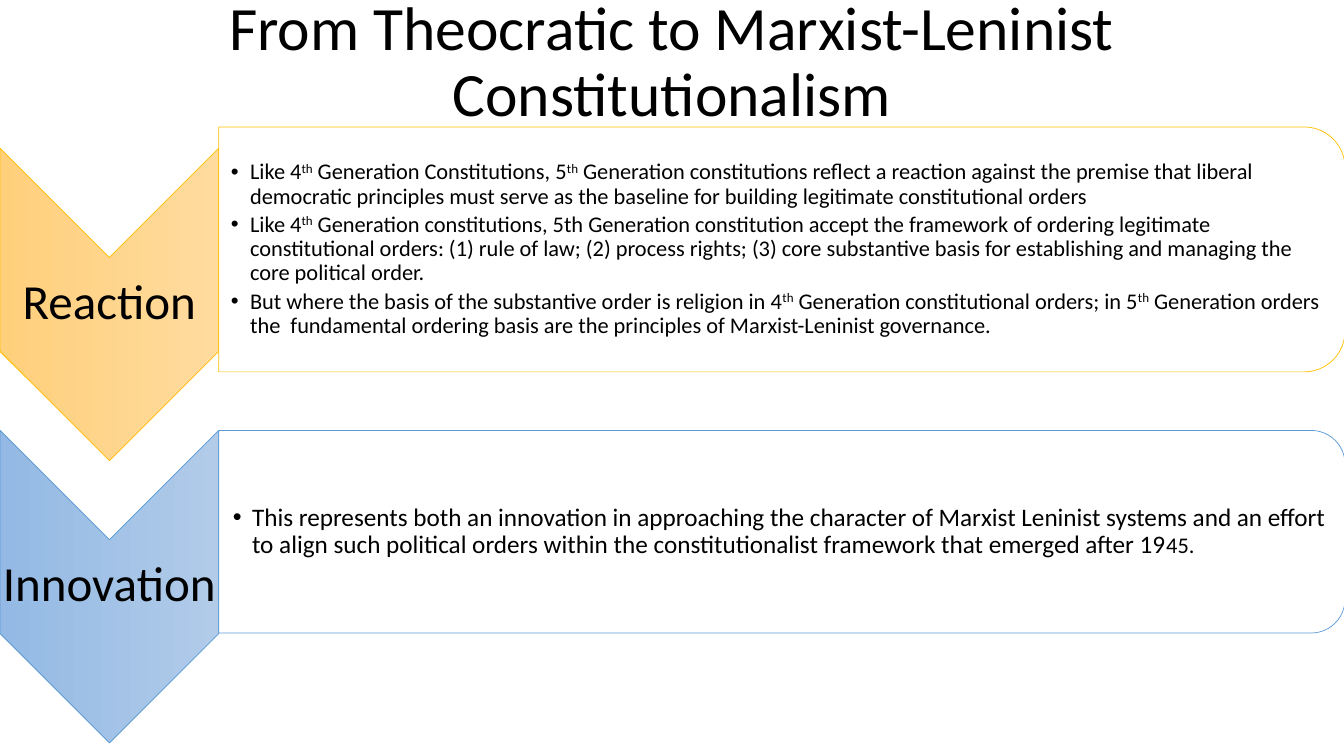
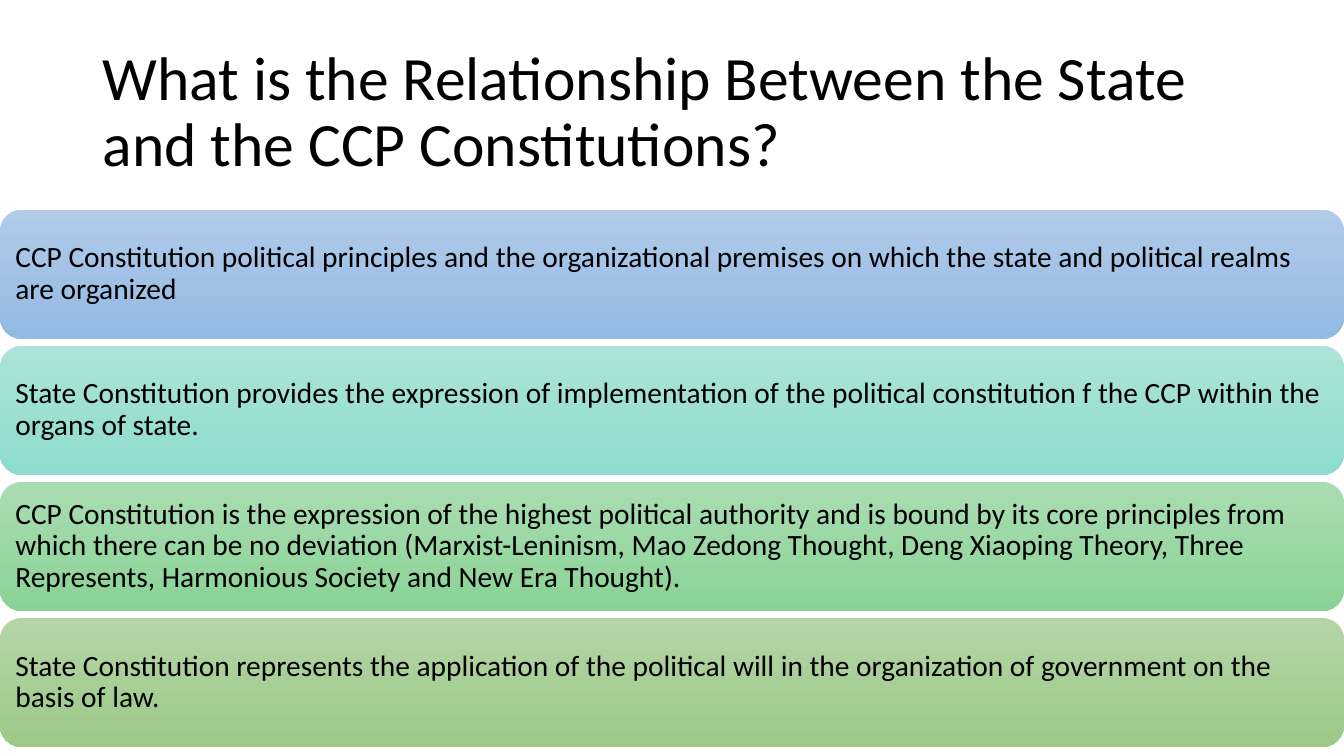
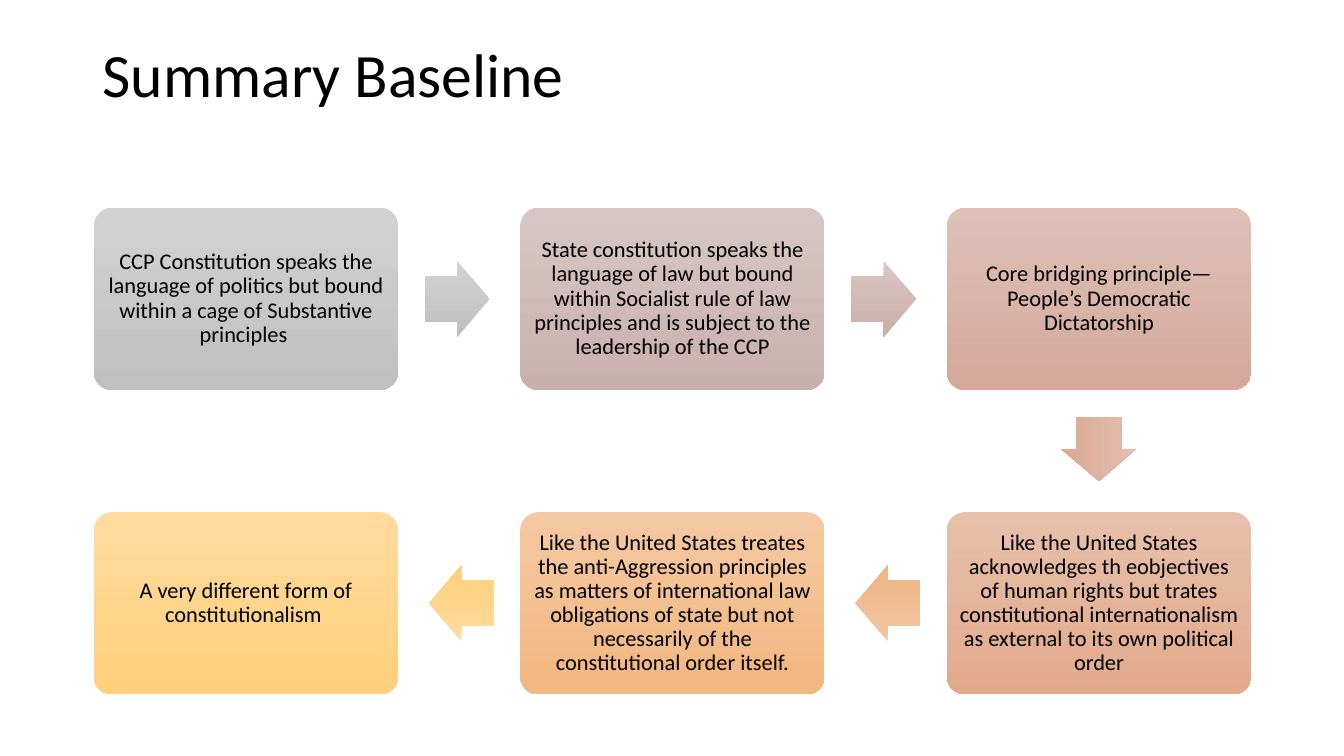
from math import atan2, copysign, degrees

from lxml import etree
from pptx import Presentation
from pptx.dml.color import RGBColor
from pptx.enum.shapes import MSO_SHAPE
from pptx.enum.text import MSO_ANCHOR, PP_ALIGN
from pptx.oxml.ns import qn
from pptx.util import Inches, Pt

CHEVRON = MSO_SHAPE.CHEVRON
TAB_PANEL = MSO_SHAPE.ROUND_2_SAME_RECTANGLE
ROUNDED = MSO_SHAPE.ROUNDED_RECTANGLE
ARROW = MSO_SHAPE.RIGHT_ARROW
MIDDLE = MSO_ANCHOR.MIDDLE
LEFT, CENTER = PP_ALIGN.LEFT, PP_ALIGN.CENTER

FONT = "Calibri"
BLACK, WHITE = "000000", "FFFFFF"
GOLD, BLUE = "FFC000", "5B9BD5"
GOLD_SHADES = ("FFDB9E", "FFD07C")
BLUE_SHADES = ("B1CBE9", "93B9E4")
SLIDE_WIDTH, SLIDE_HEIGHT = 13.33, 7.5
SUPERSCRIPT = {"baseline": "30000"}
SMALLER = {"sz": "1600"}


def rgb(value):
    return RGBColor.from_string(value)


def add_bullet(paragraph):
    properties = paragraph._p.get_or_add_pPr()
    properties.set("marL", str(Inches(0.19)))
    properties.set("indent", str(Inches(-0.19)))
    etree.SubElement(properties, qn("a:buFont")).set("typeface", "Arial")
    etree.SubElement(properties, qn("a:buChar")).set("char", "•")


class Deck:
    def __init__(self):
        self.presentation = Presentation()
        self.presentation.slide_width = Inches(SLIDE_WIDTH)
        self.presentation.slide_height = Inches(SLIDE_HEIGHT)
        self.slide = None

    def new_slide(self, title, left=0.92, top=0.4, width=11.5, height=1.45, align=LEFT):
        blank = self.presentation.slide_layouts[6]
        self.slide = self.presentation.slides.add_slide(blank)
        self.text_box((left, top, width, height), [title], 44, align, (0.1, 0.05, 0.1, 0.05))

    def fill_text(self, frame, paragraphs, size, align, insets, bullets=False, marked=None):
        """Fill a frame; text between ^ signs takes the run attributes in marked."""
        sides = ("margin_left", "margin_top", "margin_right", "margin_bottom")
        layout = dict(zip(sides, map(Inches, insets)))
        layout.update(word_wrap=True, vertical_anchor=MIDDLE)
        for name, value in layout.items():
            setattr(frame, name, value)
        for number, text in enumerate(paragraphs):
            paragraph = frame.add_paragraph() if number else frame.paragraphs[0]
            if bullets:
                add_bullet(paragraph)
            spacing = {"alignment": align, "line_spacing": 0.9}
            if number < len(paragraphs) - 1:
                spacing["space_after"] = Pt(3)
            for name, value in spacing.items():
                setattr(paragraph, name, value)
            for position, piece in enumerate(text.split("^")):
                if not piece:
                    continue
                run = paragraph.add_run()
                run.text = piece
                for name, value in {"name": FONT, "size": Pt(size)}.items():
                    setattr(run.font, name, value)
                run.font.color.rgb = rgb(BLACK)
                if position % 2:
                    for name, value in marked.items():
                        run._r.get_or_add_rPr().set(name, value)

    def text_box(self, box, paragraphs, size, align, insets, **options):
        frame = self.slide.shapes.add_textbox(*map(Inches, box)).text_frame
        self.fill_text(frame, paragraphs, size, align, insets, **options)

    def shape(self, preset, box, shades, line=None, rotation=0, adjustments=()):
        """Add a shape with one plain colour or a top-to-bottom pair of shades."""
        shape = self.slide.shapes.add_shape(preset, *map(Inches, box))
        shape.shadow.inherit = False
        shape.rotation = rotation
        for number, value in enumerate(adjustments):
            shape.adjustments[number] = value
        if isinstance(shades, str):
            shape.fill.solid()
            shape.fill.fore_color.rgb = rgb(shades)
        else:
            shape.fill.gradient()
            shape.fill.gradient_angle = 270
            for stop, shade in zip(shape.fill.gradient_stops, shades):
                stop.color.rgb = rgb(shade)
        if line:
            shape.line.color.rgb = rgb(line)
            shape.line.width = Pt(0.5)
        else:
            shape.line.fill.background()
        return shape

    def quarter_turned(self, preset, box, shades, line):
        """Add a shape turned by 90 degrees so that it covers the given box."""
        left, top, width, height = box
        shift = (width - height) / 2
        upright = (left + shift, top - shift, height, width)
        self.shape(preset, upright, shades, line, rotation=90)

    def card(self, box, text, size, shades, align, inset, adjustments=()):
        card = self.shape(ROUNDED, box, shades, adjustments=adjustments)
        self.fill_text(card.text_frame, [text], size, align, [inset] * 4)

    def arrow(self, start, end, shades):
        """Add a block arrow between the centres of two neighbouring cards."""
        width, height, setback = 0.64, 0.75, 0.02
        run, rise = end[0] - start[0], end[1] - start[1]
        center_x = (start[0] + end[0]) / 2 - (copysign(setback, run) if run else 0)
        center_y = (start[1] + end[1]) / 2 - (copysign(setback, rise) if rise else 0)
        box = (center_x - width / 2, center_y - height / 2, width, height)
        self.shape(ARROW, box, shades, rotation=degrees(atan2(rise, run)), adjustments=(0.6, 0.5))


def theocratic_slide(deck):
    deck.new_slide("From Theocratic to Marxist-Leninist Constitutionalism",
                   0, 0, SLIDE_WIDTH, 1.26, CENTER)
    reaction = [
        "Like 4^th^ Generation Constitutions, 5^th^ Generation constitutions reflect a reaction "
        "against the premise that liberal democratic principles must serve as the baseline for "
        "building legitimate constitutional orders",
        "Like 4^th^ Generation constitutions, 5th Generation constitution accept the framework of "
        "ordering legitimate constitutional orders: (1) rule of law; (2) process rights; (3) core "
        "substantive basis for establishing and managing the core political order.",
        "But where the basis of the substantive order is religion in 4^th^ Generation "
        "constitutional orders; in 5^th^ Generation orders the  fundamental ordering basis are "
        "the principles of Marxist-Leninist governance.",
    ]
    innovation = [
        "This represents both an innovation in approaching the character of Marxist Leninist "
        "systems and an effort to align such political orders within the constitutionalist "
        "framework that emerged after 19^45.^",
    ]
    label_width, panel_width = 2.17, 11.17
    stages = [
        ("Reaction", 1.47, GOLD_SHADES, GOLD, 1.26, 2.43, reaction, 16, 0.12, 11.05, SUPERSCRIPT),
        ("Innovation", 4.27, BLUE_SHADES, BLUE, 4.27, 2.01, innovation, 18, 0.14, 11.07, SMALLER),
    ]
    for (label, top, shades, line, panel_top, panel_height,
         points, size, indent, text_width, marked) in stages:
        deck.quarter_turned(CHEVRON, (0, top, label_width, 3.1), shades, line)
        deck.text_box((0, top + 1.08, label_width, 0.93), [label], 35, CENTER, [0.02] * 4)
        panel = (label_width, panel_top, panel_width, panel_height)
        deck.quarter_turned(TAB_PANEL, panel, WHITE, line)
        text_area = (label_width, panel_top + 0.1, text_width, panel_height - 0.2)
        deck.text_box(text_area, points, size, LEFT, (indent, 0.01, 0.01, 0.01),
                      bullets=True, marked=marked)


def relationship_slide(deck):
    deck.new_slide("What is the Relationship Between the State and the CCP Constitutions?")
    statements = [
        ("CCP Constitution political principles and the organizational premises on which the "
         "state and political realms are organized", BLUE_SHADES),
        ("State Constitution provides the expression of implementation of the political "
         "constitution f the CCP within the organs of state.", ("ADE3D9", "8EDCCE")),
        ("CCP Constitution is the expression of the highest political authority and is bound by "
         "its core principles from which there can be no deviation (Marxist-Leninism, Mao Zedong "
         "Thought, Deng Xiaoping Theory, Three Represents, Harmonious Society and New Era "
         "Thought).", ("AADCB2", "8AD396")),
        ("State Constitution represents the application of the political will in the "
         "organization of government on the basis of law.", ("B5D5A7", "9CC987")),
    ]
    for row, (text, shades) in enumerate(statements):
        deck.card((0, 2.08 + 1.35 * row, SLIDE_WIDTH, 1.28), text, 21, shades, LEFT, 0.09)


def summary_slide(deck):
    deck.new_slide("Summary Baseline", top=0.04)
    width, height = 3.02, 1.81
    steps = [
        (0, 0, "CCP Constitution speaks the language of politics but bound within a cage of "
         "Substantive principles ", ("D2D2D2", "C0C0C0")),
        (1, 0, "State constitution speaks the language of law but bound within Socialist rule of "
         "law principles and is subject to the leadership of the CCP", ("D7C7C4", "C9B0AE")),
        (2, 0, "Core bridging principle—People’s Democratic Dictatorship", ("DEC0B7", "D4A99B")),
        (2, 1, "Like the United States acknowledges th eobjectives of human rights but trates "
         "constitutional internationalism as external to its own political order",
         ("E7C0AB", "E2AA8B")),
        (1, 1, "Like the United States treates the anti-Aggression principles as matters of "
         "international law obligations of state but not necessarily of the constitutional "
         "order itself.", ("F4C8A2", "F3B780")),
        (0, 1, "A very different form of constitutionalism ", GOLD_SHADES),
    ]
    arrow_shades = [("D2D2D2", "C0C0C0"), ("D8C5C1", "CBAFA9"), ("E2BEB1", "DBA893"),
                    ("F0C5A4", "EFB482"), GOLD_SHADES]
    centers = []
    for column, row, text, shades in steps:
        left, top = 0.93 + 4.23 * column, 2.06 + 3.02 * row
        deck.card((left, top, width, height), text, 16, shades, CENTER, 0.07, (0.1,))
        centers.append((left + width / 2, top + height / 2))
    for start, end, shades in zip(centers, centers[1:], arrow_shades):
        deck.arrow(start, end, shades)


def main():
    deck = Deck()
    theocratic_slide(deck)
    relationship_slide(deck)
    summary_slide(deck)
    deck.presentation.save("out.pptx")


if __name__ == "__main__":
    main()
